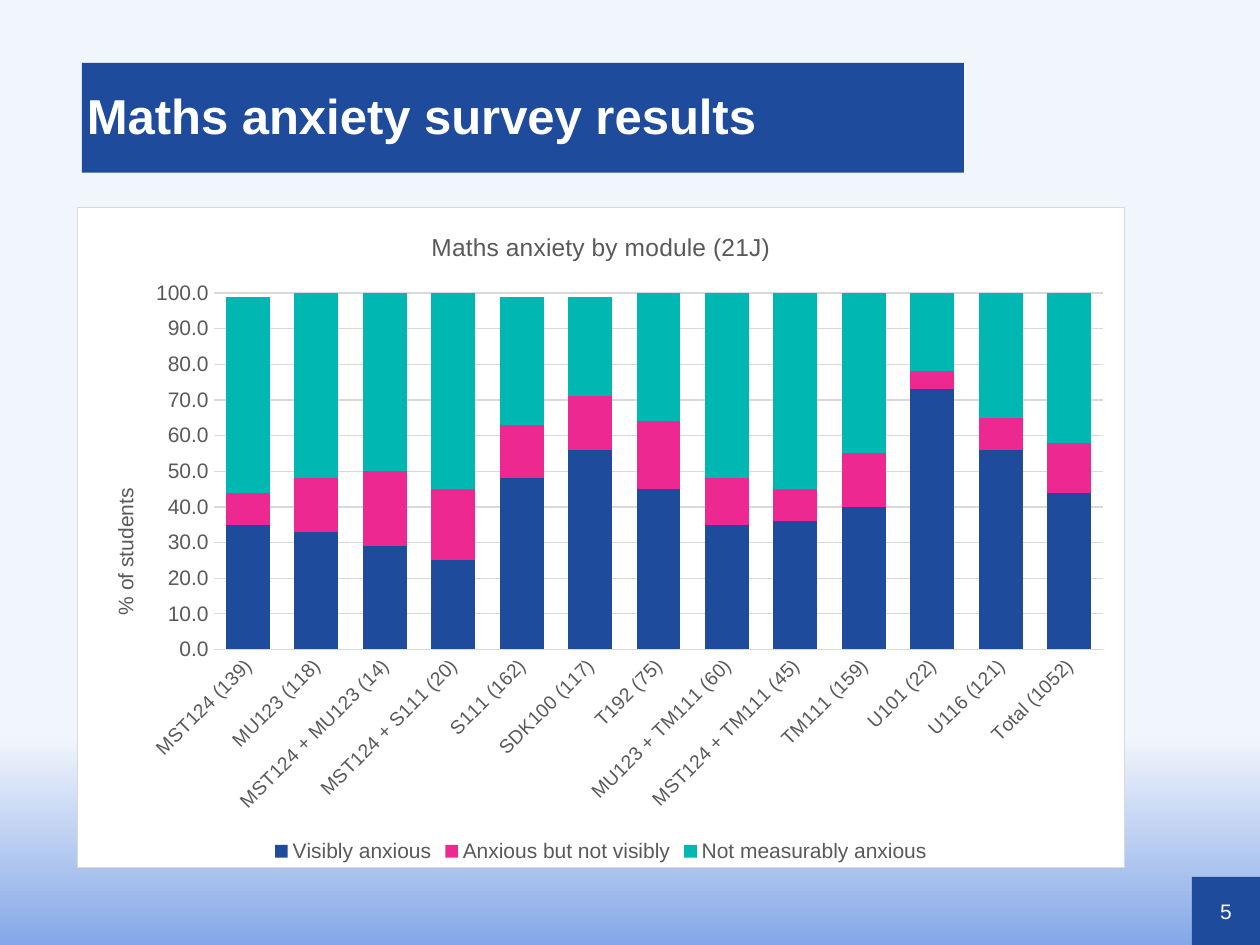
import pptx
import pptx.util
import pptx.chart.data
import pptx.dml.color
import pptx.enum.chart
import pptx.enum.shapes
import pptx.enum.text
import pptx.oxml
import pptx.oxml.ns
from pptx.util import Inches

NAVY, WHITE, GREY, RULE = "1E4B9B", "FFFFFF", "595959", "D9D9D9"
PALE, SKY = "F1F5FC", "84A8E7"
FONT = "Arial"

MODULES = ["MST124 (139)", "MU123 (118)", "MST124 + MU123 (14)",
           "MST124 + S111 (20)", "S111 (162)", "SDK100 (117)", "T192 (75)",
           "MU123 + TM111 (60)", "MST124 + TM111 (45)", "TM111 (159)",
           "U101 (22)", "U116 (121)", "Total (1052)"]
SERIES = [
    ("Visibly anxious", NAVY,
     [35, 33, 29, 25, 48, 56, 45, 35, 36, 40, 73, 56, 44]),
    ("Anxious but not visibly", "ED2891",
     [9, 15, 21, 20, 15, 15, 19, 13, 9, 15, 5, 9, 14]),
    ("Not measurably anxious", "00B7B2",
     [55, 52, 50, 55, 36, 28, 36, 52, 56, 45, 23, 35, 43]),
]


def rgb(value):
    return pptx.dml.color.RGBColor.from_string(value)


def set_font(font, size, color, bold=False):
    font.name, font.size, font.bold = FONT, pptx.util.Pt(size), bold
    font.color.rgb = rgb(color)


def set_line(line, color):
    line.color.rgb = rgb(color)
    line.width = pptx.util.Pt(0.75)


def set_text(tf, text, size=12, color=GREY, bold=False, align=None, spacing=None):
    p = tf.paragraphs[0]
    p.alignment = align
    p.line_spacing = spacing
    r = p.add_run()
    r.text = text
    set_font(r.font, size, color, bold)


def set_background(s):
    fill = s.background.fill
    fill.gradient()
    fill.gradient_angle = 270
    for stop, position, color in zip(fill.gradient_stops, (0.78, 1), (PALE, SKY)):
        stop.position = position
        stop.color.rgb = rgb(color)


def add_box(s, left, top, width, height, text, margins=(0, 0), **style):
    sp = s.shapes.add_shape(pptx.enum.shapes.MSO_SHAPE.RECTANGLE, Inches(left),
                            Inches(top), Inches(width), Inches(height))
    sp.shadow.inherit = False
    sp.fill.solid()
    sp.fill.fore_color.rgb = rgb(NAVY)
    sp.line.fill.background()
    tf = sp.text_frame
    tf.word_wrap = True
    tf.vertical_anchor = pptx.enum.text.MSO_ANCHOR.MIDDLE
    tf.margin_left, tf.margin_top = map(Inches, margins)
    tf.margin_right = tf.margin_bottom = 0
    set_text(tf, text, **style)


def set_layout(parent, **values):
    """Place a chart part by fractions of the chart area."""
    qn = pptx.oxml.ns.qn
    old = parent.find(qn("c:layout"))
    if old is not None:
        parent.remove(old)
    target = '<c:layoutTarget val="inner"/>' if "w" in values else ""
    modes = '<c:xMode val="edge"/><c:yMode val="edge"/>'
    places = "".join(f'<c:{key} val="{val}"/>' for key, val in values.items())
    layout = pptx.oxml.parse_xml(
        f'<c:layout {pptx.oxml.ns.nsdecls("c")}><c:manualLayout>'
        f'{target}{modes}{places}</c:manualLayout></c:layout>')
    parent.insert(0 if parent.find(qn("c:tx")) is None else 1, layout)


def style_chart_area(chart):
    chart.font.name = FONT
    chart.font.size = pptx.util.Pt(10)
    area = pptx.oxml.parse_xml(
        f'<c:spPr {pptx.oxml.ns.nsdecls("c", "a")}>'
        f'<a:solidFill><a:srgbClr val="{WHITE}"/></a:solidFill>'
        f'<a:ln w="9525"><a:solidFill><a:srgbClr val="{RULE}"/></a:solidFill></a:ln>'
        '</c:spPr>')
    chart.element.find(pptx.oxml.ns.qn("c:txPr")).addprevious(area)


def style_axes(chart):
    cat, val = chart.category_axis, chart.value_axis
    for axis, size in ((cat, 11), (val, 12)):
        set_font(axis.tick_labels.font, size, GREY)
        axis.major_tick_mark = pptx.enum.chart.XL_TICK_MARK.NONE
        axis.minor_tick_mark = pptx.enum.chart.XL_TICK_MARK.NONE
    set_line(cat.format.line, RULE)
    labels = cat.tick_labels.font._element.getparent().getparent().getparent()
    labels.find(pptx.oxml.ns.qn("a:bodyPr")).set("rot", "-2700000")

    val.minimum_scale, val.maximum_scale, val.major_unit = 0, 100, 10
    val.format.line.fill.background()
    set_line(val.major_gridlines.format.line, RULE)
    val.tick_labels.number_format = "0.0"
    val.tick_labels.number_format_is_linked = False
    title = val.axis_title
    set_text(title.text_frame, "% of students")
    body = title.text_frame._txBody.find(pptx.oxml.ns.qn("a:bodyPr"))
    body.set("rot", "-5400000")
    body.set("vert", "horz")
    set_layout(title._element, x=0.03, y=0.42)


def add_survey_chart(s):
    data = pptx.chart.data.CategoryChartData()
    data.categories = MODULES
    for name, _, values in SERIES:
        data.add_series(name, values)
    chart = s.shapes.add_chart(
        pptx.enum.chart.XL_CHART_TYPE.COLUMN_STACKED, Inches(0.61), Inches(1.64),
        Inches(8.32), Inches(5.25), data).chart
    style_chart_area(chart)

    # Stacked columns
    plot = chart.plots[0]
    plot.gap_width, plot.overlap, plot.vary_by_categories = 56, 100, False
    for series, (_, color, _) in zip(plot.series, SERIES):
        series.format.fill.solid()
        series.format.fill.fore_color.rgb = rgb(color)
    set_layout(plot._element.getparent(), x=0.13, y=0.13, w=0.85, h=0.54)

    # Title, axes and legend
    chart.has_title = True
    set_text(chart.chart_title.text_frame, "Maths anxiety by module (21J)", size=14)
    style_axes(chart)
    chart.has_legend = True
    chart.legend.position = pptx.enum.chart.XL_LEGEND_POSITION.BOTTOM
    chart.legend.include_in_layout = False
    set_font(chart.legend.font, 12, GREY)


def main():
    prs = pptx.Presentation()
    prs.slide_width, prs.slide_height = Inches(10), Inches(7.5)
    s = prs.slides.add_slide(prs.slide_layouts[6])
    set_background(s)

    # Page number and heading
    add_box(s, 9.46, 6.96, 0.54, 0.54, "5", color=WHITE,
            align=pptx.enum.text.PP_ALIGN.CENTER)
    add_box(s, 0.65, 0.5, 7, 0.87, "Maths anxiety survey results",
            margins=(0.04, 0.02), size=28, color=WHITE, bold=True, spacing=0.9,
            align=pptx.enum.text.PP_ALIGN.LEFT)

    add_survey_chart(s)
    prs.save("out.pptx")


if __name__ == "__main__":
    main()
